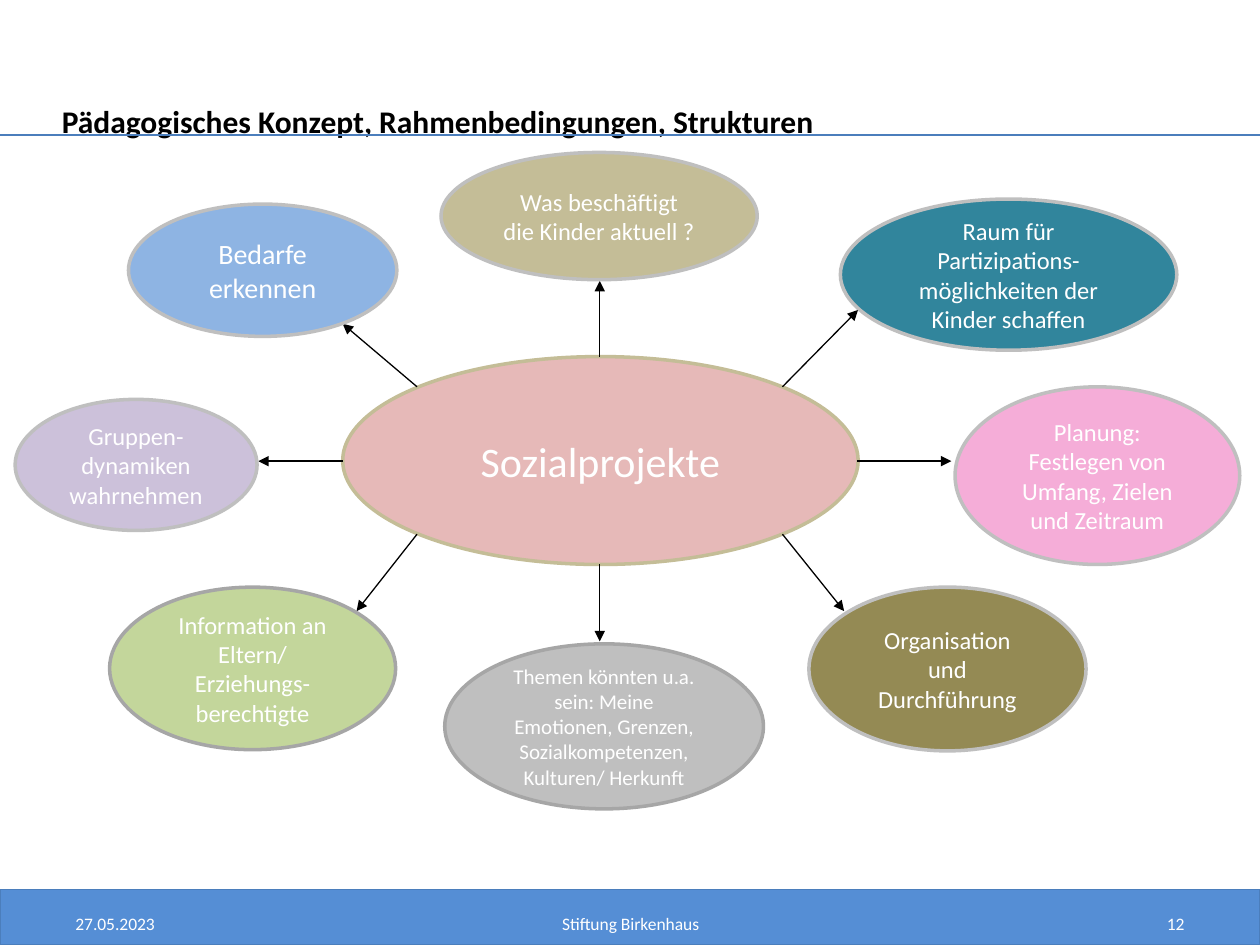
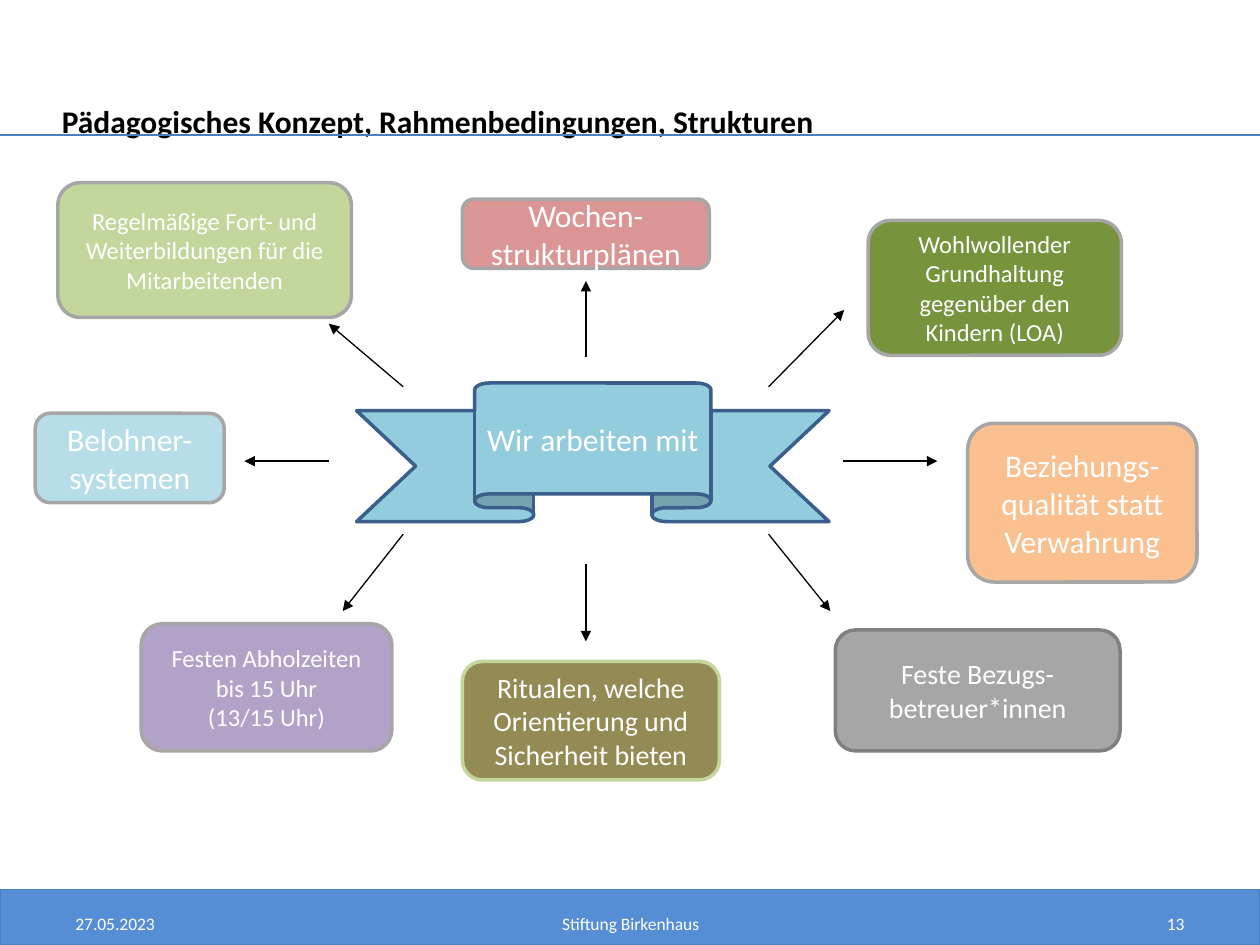
from dataclasses import dataclass
from pptx import Presentation, util as u
from pptx.dml.color import RGBColor
from pptx.enum import shapes as sh, text as tx
from pptx.oxml import parse_xml
from pptx.oxml.ns import nsdecls


@dataclass(frozen=True)
class Theme:
    font: str = "Calibri"
    white: str = "FFFFFF"
    black: str = "000000"
    band: str = "558ED5"
    rule: str = "4B7EBC"
    silver: str = "BFBFBF"
    gray: str = "A6A6A6"
    title: int = 18
    foot: int = 10
    edge: float = 2


T = Theme()
ALIGN, ANCHOR = tx.PP_ALIGN, tx.MSO_ANCHOR
KIND = sh.MSO_SHAPE

# Content
TITLE = "Pädagogisches Konzept, Rahmenbedingungen, Strukturen"
# Footer parts: text (None is the page number), left, width, alignment
FOOT = [
    ("27.05.2023", 0.5, 2.33, ALIGN.LEFT),
    (None, 7.17, 2.33, ALIGN.RIGHT),
    ("Stiftung Birkenhaus", 3.42, 3.17, ALIGN.CENTER),
]

# Nodes: text, (left, top, width, height), fill, line, size
PAGES = [
    dict(
        page=12, mid=4.76, kind=KIND.OVAL,
        hub=("Sozialprojekte", (2.72, 2.83, 4.09, 1.65), "E6B9B8", "C4BD97", 24),
        hub_kind=KIND.OVAL, hub_adj=[],
        nodes=[
            ("Bedarfe erkennen", (1.02, 1.62, 2.13, 1.05), "8EB4E3", T.silver, 16),
            ("Was beschäftigt\vdie Kinder aktuell ?", (3.5, 1.21, 2.51, 1.01),
             "C4BD97", T.silver, 14),
            ("Gruppen-dynamiken wahrnehmen", (0.12, 3.17, 1.92, 1.04),
             "CCC1DA", T.silver, 14),
            ("Raum für Partizipations-möglichkeiten der Kinder schaffen",
             (6.67, 1.58, 2.67, 1.2), "31859C", T.silver, 14),
            ("Planung: Festlegen von Umfang, Zielen und Zeitraum",
             (7.58, 3.07, 2.26, 1.41), "F5ADD8", T.silver, 14),
            ("Organisation\nund Durchführung", (6.42, 4.66, 2.2, 1.3),
             "948A54", T.silver, 14),
            ("Themen könnten u.a. sein: Meine\vEmotionen, Grenzen, "
             "Sozialkompetenzen, Kulturen/ Herkunft",
             (3.53, 5.11, 2.53, 1.31), T.silver, T.gray, 12),
            ("Information an Eltern/ Erziehungs-berechtigte",
             (0.87, 4.66, 2.27, 1.29), "C3D69B", T.gray, 14),
        ],
    ),
    dict(
        page=13, mid=4.65, kind=KIND.ROUNDED_RECTANGLE,
        hub=("Wir arbeiten mit", (2.83, 3.04, 3.75, 1.1), "93CDDD", "3A5F8C", 18),
        hub_kind=KIND.UP_RIBBON, hub_adj=[0.2, 0.5],
        nodes=[
            ("Wochen-strukturplänen", (3.67, 1.58, 1.96, 0.55), "D99694", T.gray, 18),
            ("Wohlwollender Grundhaltung gegenüber den Kindern (LOA)",
             (6.89, 1.75, 2.01, 1.07), "77933C", T.gray, 14),
            ("Beziehungs-qualität statt Verwahrung", (7.68, 3.36, 1.82, 1.26),
             "FAC090", T.gray, 18),
            ("Feste Bezugs-betreuer*innen", (6.63, 5, 2.26, 0.96),
             T.gray, "808080", 16),
            ("Ritualen, welche Orientierung und Sicherheit bieten",
             (3.67, 5.25, 2.04, 0.94), "948A54", "C3D69B", 16),
            ("Festen Abholzeiten bis 15 Uhr\n(13/15 Uhr)",
             (1.12, 4.95, 1.99, 1.01), "B3A2C7", T.gray, 14),
            ("Belohner-systemen", (0.28, 3.28, 1.5, 0.71), "B7DEE8", T.gray, 18),
            ("Regelmäßige Fort- und Weiterbildungen für die Mitarbeitenden",
             (0.46, 1.45, 2.33, 1.07), "C3D69B", T.gray, 14),
        ],
    ),
]

# Arrows: start and end, as offsets from the hub centre
MID_Y = 3.66
RAYS = [
    (0, -0.83, 0, -1.43), (0, 0.82, 0, 1.43),
    (-2.04, 0, -2.71, 0), (2.04, 0, 2.79, 0),
    (1.45, -0.59, 2.05, -1.2), (-1.45, -0.59, -2.04, -1.09),
    (1.45, 0.58, 1.94, 1.19), (-1.45, 0.58, -1.93, 1.19),
]


def inch(vals):
    return [u.Inches(v) for v in vals]


def write(shape, words, size, color, align, anchor=ANCHOR.MIDDLE, bold=False):
    frame = shape.text_frame
    frame.text = words
    frame.word_wrap = True
    frame.auto_size = tx.MSO_AUTO_SIZE.NONE
    frame.vertical_anchor = anchor
    for para in frame.paragraphs:
        para.alignment = align
        font = para.font
        font.name, font.size, font.bold = T.font, u.Pt(size), bold
        font.color.rgb = RGBColor.from_string(color)


def block(slide, kind, box, fill, edge, width=T.edge):
    shape = slide.shapes.add_shape(kind, *inch(box))
    shape.shadow.inherit = False
    shape.fill.solid()
    shape.fill.fore_color.rgb = RGBColor.from_string(fill)
    shape.line.color.rgb = RGBColor.from_string(edge)
    shape.line.width = u.Pt(width)
    return shape


def line(slide, ends, color, width, arrow=False):
    conn = slide.shapes.add_connector(sh.MSO_CONNECTOR.STRAIGHT, *inch(ends))
    conn.line.color.rgb = RGBColor.from_string(color)
    conn.line.width = u.Pt(width)
    props = conn._element.spPr
    if arrow:
        head = parse_xml(f'<a:tailEnd {nsdecls("a")} type="triangle"/>')
        props.get_or_add_ln().append(head)
    props.append(parse_xml(f'<a:effectLst {nsdecls("a")}/>'))


def node(slide, kind, item, adj=()):
    words, box, fill, edge, size = item
    shape = block(slide, kind, box, fill, edge)
    for i, val in enumerate(adj):
        shape.adjustments[i] = val
    write(shape, words, size, T.white, ALIGN.CENTER)


def frame(slide, page):
    # Band, rule, footer and title shared by all slides
    block(slide, KIND.RECTANGLE, (0, 7.06, 10, 0.44), T.band, T.rule, 0.75)
    line(slide, (0, 1.07, 10, 1.07), T.rule, 1)
    for words, left, width, align in FOOT:
        box = slide.shapes.add_textbox(*inch((left, 7.13, width, 0.4)))
        write(box, words or str(page), T.foot, T.white, align)
    title = slide.shapes.title
    title.left, title.top, title.width, title.height = inch((0.39, 0.76, 6.89, 0.4))
    write(title, TITLE, T.title, T.black, ALIGN.LEFT, ANCHOR.TOP, True)


def main():
    deck = Presentation()
    deck.slide_width, deck.slide_height = inch((10, 7.5))
    for data in PAGES:
        slide = deck.slides.add_slide(deck.slide_layouts[5])
        frame(slide, data["page"])
        # Hub, arrows, then the nodes around it
        node(slide, data["hub_kind"], data["hub"], data["hub_adj"])
        mid = data["mid"]
        for x1, y1, x2, y2 in RAYS:
            ends = (mid + x1, MID_Y + y1, mid + x2, MID_Y + y2)
            line(slide, ends, T.black, 0.75, arrow=True)
        for item in data["nodes"]:
            node(slide, data["kind"], item)
    deck.save("out.pptx")


if __name__ == "__main__":
    main()
